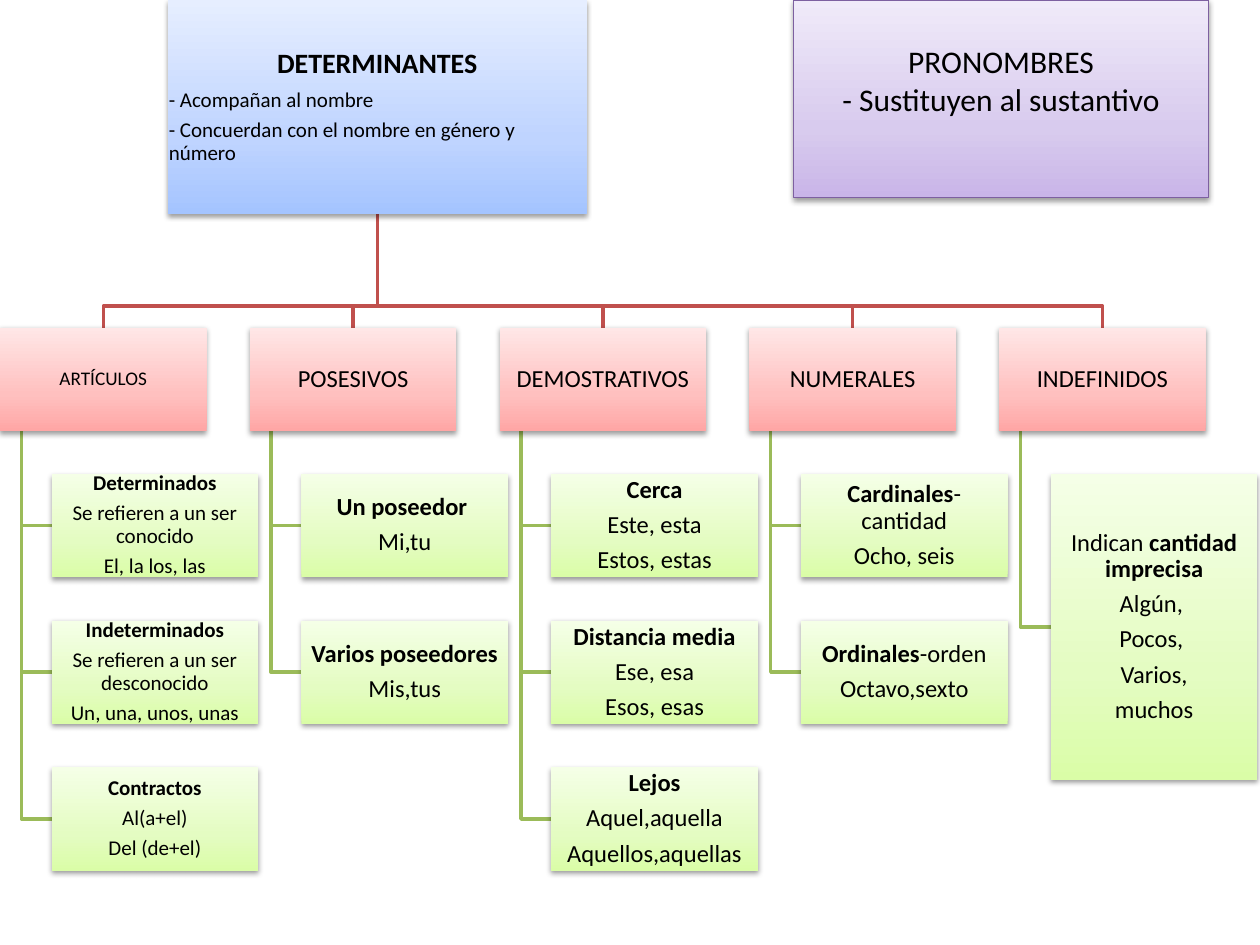
from copy import deepcopy

from lxml import etree
from pptx import Presentation
from pptx.dml import color
from pptx.enum import shapes, text
from pptx.oxml import ns
from pptx.util import Inches, Pt

BLUE = ("A4C4FF", "BFD4FF", "E6EEFF")
RED = ("FFA6A5", "FFC0BF", "FFE7E7")
GREEN = ("DAFDA7", "E4FCC2", "F5FFE7")
PURPLE = ("C9B5E8", "D8CBEE", "F0EAF9")
RED_LINE, GREEN_LINE, PURPLE_LINE = "C0504D", "9BBB59", "7D60A0"

BOX_WIDTH, BOX_HEIGHT = 1.64, 0.82
COLUMN_STEP = 7.93 / 4
ROW_STEP = 2.33 / 2
CATEGORY_TOP, DETAIL_TOP = 2.6, 3.76
DETAIL_INDENT, TRUNK_INDENT = 0.41, 0.17
ROOT = (1.33, 0, 3.33, 1.7)
BRANCH_Y = 2.43

CATEGORIES = [
    ("ARTÍCULOS", 11, 12, BOX_HEIGHT, [
        ["*Determinados*", "Se refieren a un ser conocido", "El, la los, las"],
        ["*Indeterminados*", "Se refieren a un ser desconocido", "Un, una, unos, unas"],
        ["*Contractos*", "Al(a+el)", "Del (de+el)"],
    ]),
    ("POSESIVOS", 14, 14, BOX_HEIGHT, [
        ["*Un poseedor *", "Mi,tu"],
        ["*Varios poseedores*", "Mis,tus"],
    ]),
    ("DEMOSTRATIVOS", 14, 14, BOX_HEIGHT, [
        ["*Cerca*", "Este, esta", "Estos, estas"],
        ["*Distancia media*", "Ese, esa", "Esos, esas"],
        ["*Lejos*", "Aquel,aquella", "Aquellos,aquellas"],
    ]),
    ("NUMERALES", 14, 14, BOX_HEIGHT, [
        ["*Cardinales*- cantidad", "Ocho, seis"],
        ["*Ordinales*-orden", "Octavo,sexto"],
    ]),
    ("INDEFINIDOS", 14, 14, 2.43, [
        ["Indican *cantidad imprecisa*", "Algún, ", "Pocos, ", "Varios,", "muchos"],
    ]),
]


def rgb(value):
    return color.RGBColor.from_string(value)


def add_shadow(shape):
    shape.shadow.inherit = False
    effects = shape._element.spPr.find(ns.qn("a:effectLst"))
    shadow = etree.SubElement(
        effects, ns.qn("a:outerShdw"), blurRad=str(Pt(3.1)), dist=str(Pt(1.6)),
        dir="5400000", rotWithShape="0")
    black = etree.SubElement(shadow, ns.qn("a:srgbClr"), val="000000")
    etree.SubElement(black, ns.qn("a:alpha"), val="38000")


def fill_gradient(shape, colors):
    shape.fill.gradient()
    shape.fill.gradient_angle = 90
    stop_list = shape._element.spPr.find(".//" + ns.qn("a:gsLst"))
    stop_list.append(deepcopy(stop_list[-1]))
    for stop, position, value in zip(shape.fill.gradient_stops, (0, 0.35, 1), colors):
        stop.position = position
        stop.color.rgb = rgb(value)


def add_box(slide, left, top, width, height, colors, outline=None):
    shape = slide.shapes.add_shape(
        shapes.MSO_SHAPE.RECTANGLE, *map(Inches, (left, top, width, height)))
    fill_gradient(shape, colors)
    if outline:
        shape.line.color.rgb = rgb(outline)
        shape.line.width = Pt(0.75)
    else:
        shape.line.fill.background()
    add_shadow(shape)
    return shape


def write_text(shape, lines, size, line_spacing=0.9, space_after=0.35,
               margins=(0.01, 0.01, 0.01, 0.01), body_align=text.PP_ALIGN.CENTER):
    frame = shape.text_frame
    frame.word_wrap = True
    frame.vertical_anchor = text.MSO_ANCHOR.MIDDLE
    (frame.margin_left, frame.margin_top,
     frame.margin_right, frame.margin_bottom) = map(Inches, margins)
    for index, line in enumerate(lines):
        paragraph = frame.add_paragraph() if index else frame.paragraphs[0]
        paragraph.alignment = body_align if index else text.PP_ALIGN.CENTER
        paragraph.line_spacing = line_spacing
        line_size = size[min(index, 1)] if isinstance(size, tuple) else size
        paragraph.space_after = Pt(line_size * space_after)
        for position, piece in enumerate(line.split("*")):
            if piece:
                run = paragraph.add_run()
                run.text = piece
                run.font.name = "Calibri"
                run.font.size = Pt(line_size)
                run.font.bold = position % 2 == 1
                run.font.color.rgb = rgb("000000")


def add_elbow(slide, points, line_color):
    start, *rest = [(Inches(x), Inches(y)) for x, y in points]
    builder = slide.shapes.build_freeform(*start)
    builder.add_line_segments(rest, close=False)
    shape = builder.convert_to_shape()
    shape.fill.background()
    shape.line.color.rgb = rgb(line_color)
    shape.line.width = Pt(2)
    shape.shadow.inherit = False


def add_category(slide, column, name, name_size, detail_size, detail_height, details):
    left = column * COLUMN_STEP
    center = left + BOX_WIDTH / 2
    root_center = ROOT[0] + ROOT[2] / 2
    add_elbow(slide, [(root_center, ROOT[3]), (root_center, BRANCH_Y),
                      (center, BRANCH_Y), (center, CATEGORY_TOP)], RED_LINE)
    trunk, detail_left = left + TRUNK_INDENT, left + DETAIL_INDENT
    for row, lines in enumerate(details):
        top = DETAIL_TOP + row * ROW_STEP
        middle = top + detail_height / 2
        add_elbow(slide, [(trunk, CATEGORY_TOP + BOX_HEIGHT), (trunk, middle),
                          (detail_left, middle)], GREEN_LINE)
        box = add_box(slide, detail_left, top, BOX_WIDTH, detail_height, GREEN)
        write_text(box, lines, detail_size)
    box = add_box(slide, left, CATEGORY_TOP, BOX_WIDTH, BOX_HEIGHT, RED)
    write_text(box, [name], name_size)


def main():
    presentation = Presentation()
    presentation.slide_width = Inches(10)
    presentation.slide_height = Inches(7.5)
    slide = presentation.slides.add_slide(presentation.slide_layouts[6])

    for column, category in enumerate(CATEGORIES):
        add_category(slide, column, *category)

    determiners = add_box(slide, *ROOT, BLUE)
    write_text(determiners, ["*DETERMINANTES*", "- Acompañan al nombre",
                             "- Concuerdan con el nombre en género y número"],
               (16, 12), body_align=text.PP_ALIGN.LEFT)

    pronouns = add_box(slide, 6.3, 0, 3.29, 1.57, PURPLE, PURPLE_LINE)
    write_text(pronouns, ["PRONOMBRES", "- Sustituyen al sustantivo"], 18,
               line_spacing=1.0, space_after=0, margins=(0.1, 0.05, 0.1, 0.35))

    presentation.save("out.pptx")


if __name__ == "__main__":
    main()
